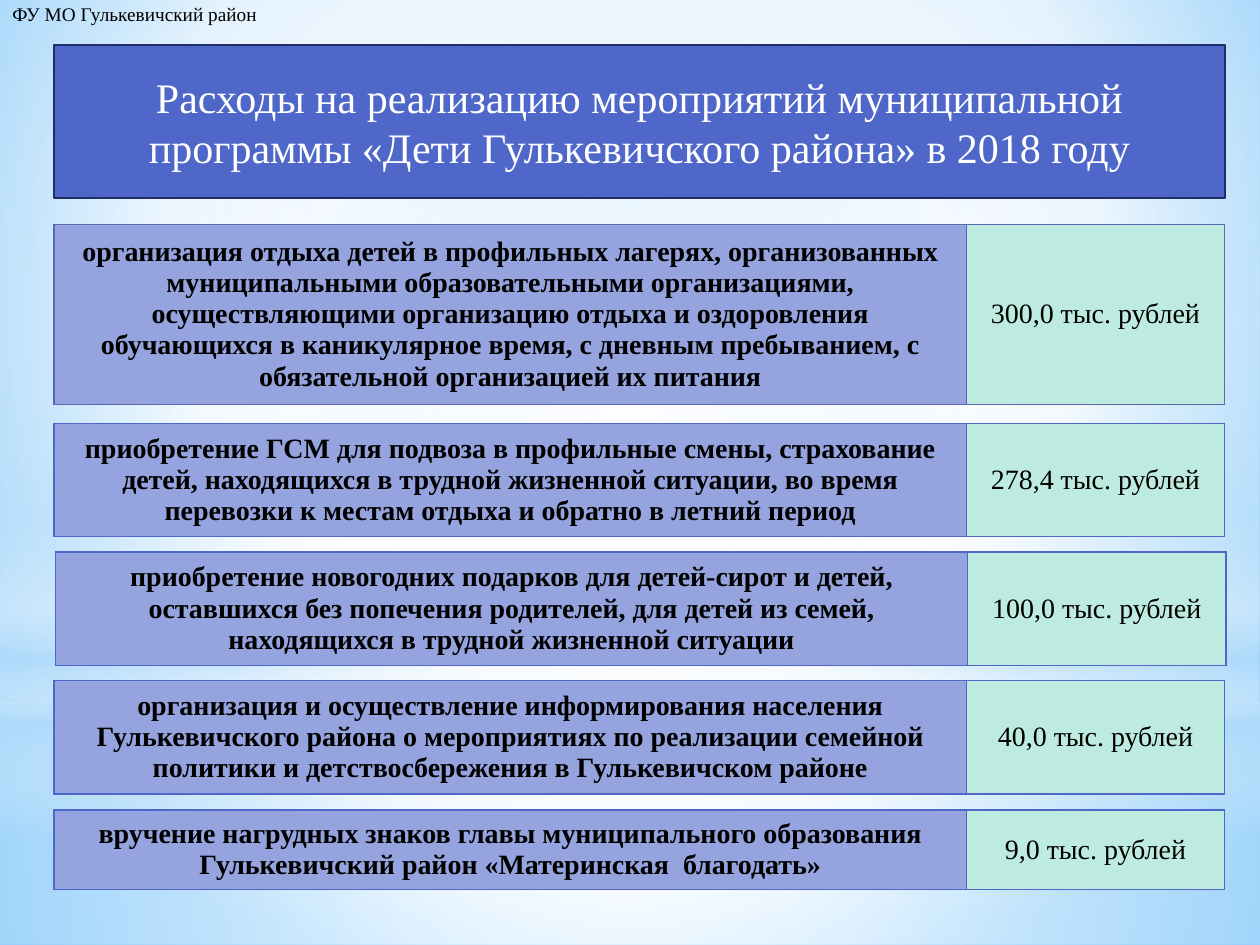
from dataclasses import dataclass

from pptx import Presentation
from pptx.dml.color import RGBColor as Rgb
from pptx.enum.shapes import MSO_SHAPE as Shape
from pptx.enum.text import MSO_ANCHOR as Anchor, MSO_AUTO_SIZE as AutoSize, PP_ALIGN as Align
from pptx.oxml import parse_xml
from pptx.oxml.ns import nsdecls
from pptx.util import Inches, Pt


@dataclass(frozen=True)
class Theme:
    font: str = "Times New Roman"
    text: str = "000000"
    light: str = "FFFFFF"
    accent: str = "4E67C8"
    accent_dark: str = "1F2E69"
    border_muted: str = "5968B0"
    activity: str = "95A4DE"
    amount: str = "BEEBDF"
    sky: str = "B4DCFA"
    sky_top: str = "9ED5FF"
    sky_edge: str = "5BB9FF"
    label_size: int = 11
    table_size: int = 16
    title_size: int = 24


def circle(left, top, right, bottom):
    return (f'<a:path path="circle"><a:fillToRect l="{left}000" t="{top}000" '
            f'r="{right}000" b="{bottom}000"/></a:path>')


CENTRED = circle(50, 50, 50, 50)
DOWNWARD = '<a:lin ang="5400000" scaled="0"/>'


class SlideBuilder:
    def __init__(self, slide, theme):
        self.slide = slide
        self.theme = theme

    def add_words(self, paragraph, words, size, color, bold=False):
        run = paragraph.add_run()
        run.text = words
        run.font.name = self.theme.font
        run.font.size = Pt(size)
        run.font.bold = bold
        run.font.color.rgb = Rgb.from_string(color)

    def gradient(self, properties, stops, shade):
        marks = "".join(
            f'<a:gs pos="{position}000"><a:srgbClr val="{color}">'
            f'<a:alpha val="{opacity}000"/></a:srgbClr></a:gs>'
            for position, color, opacity in stops)
        solid = properties.xpath("./a:solidFill")[0]
        properties.replace(solid, parse_xml(
            f'<a:gradFill {nsdecls("a")} rotWithShape="1">'
            f'<a:gsLst>{marks}</a:gsLst>{shade}</a:gradFill>'))

    def background(self, stops, shade):
        self.slide.background.fill.solid()
        properties = self.slide.element.xpath("./p:cSld/p:bg/p:bgPr")[0]
        self.gradient(properties, stops, shade)

    def glow(self, kind, top, height, stops, shade):
        glow = self.slide.shapes.add_shape(
            kind, 0, Inches(top), Inches(10), Inches(height))
        glow.shadow.inherit = False
        glow.line.fill.background()
        glow.fill.solid()
        self.gradient(glow.element.spPr, stops, shade)

    def label(self, words, left, top, width, height):
        label = self.slide.shapes.add_textbox(
            Inches(left), Inches(top), Inches(width), Inches(height))
        label.text_frame.word_wrap = False
        self.add_words(label.text_frame.paragraphs[0], words,
                       self.theme.label_size, self.theme.text)

    def title(self, words, left, top, width, height):
        title = self.slide.shapes.title
        title.left, title.top = Inches(left), Inches(top)
        title.width, title.height = Inches(width), Inches(height)
        title.element.spPr.append(parse_xml(
            f'<a:prstGeom {nsdecls("a")} prst="roundRect"><a:avLst/></a:prstGeom>'))
        title.fill.solid()
        title.fill.fore_color.rgb = Rgb.from_string(self.theme.accent)
        title.line.color.rgb = Rgb.from_string(self.theme.accent_dark)
        title.line.width = Pt(1.25)
        frame = title.text_frame
        frame.word_wrap = True
        frame.auto_size = AutoSize.NONE
        frame.vertical_anchor = Anchor.MIDDLE
        frame.paragraphs[0].alignment = Align.CENTER
        self.add_words(frame.paragraphs[0], words, self.theme.title_size, self.theme.light)
        self.slide.shapes.element.append(title.element)

    def cell(self, cell, words, fill, bold, borders):
        cell.fill.solid()
        cell.fill.fore_color.rgb = Rgb.from_string(fill)
        cell.vertical_anchor = Anchor.MIDDLE
        paragraph = cell.text_frame.paragraphs[0]
        paragraph.alignment = Align.CENTER
        self.add_words(paragraph, words, self.theme.table_size, self.theme.text, bold)
        properties = cell._tc.get_or_add_tcPr()
        for index, (side, color) in enumerate(zip("LRTB", borders)):
            properties.insert(index, parse_xml(
                f'<a:ln{side} {nsdecls("a")} w="12700"><a:solidFill>'
                f'<a:srgbClr val="{color}"/></a:solidFill></a:ln{side}>'))

    def expense(self, activity, amount, left, top, height, outer):
        widths = (7.24, 2.05)
        table = self.slide.shapes.add_table(
            1, 2, Inches(left), Inches(top), Inches(sum(widths)), Inches(height)).table
        for column, width in zip(table.columns, widths):
            column.width = Inches(width)
        inner = self.theme.accent
        self.cell(table.cell(0, 0), activity, self.theme.activity, True,
                  (outer, inner, outer, outer))
        self.cell(table.cell(0, 1), amount, self.theme.amount, False,
                  (inner, outer, outer, outer))


def main():
    theme = Theme()
    white, sky = theme.light, theme.sky
    deck = Presentation()
    deck.slide_width, deck.slide_height = Inches(10), Inches(7.5)
    page = SlideBuilder(deck.slides.add_slide(deck.slide_layouts[5]), theme)

    page.background([(0, theme.sky_top, 100), (60, white, 100), (100, theme.sky_edge, 100)],
                    circle(20, 10, 20, 60))
    page.glow(Shape.RECTANGLE, 5.58, 1.92,
              [(0, white, 91), (37, white, 76), (100, sky, 79)], CENTRED)
    page.glow(Shape.RECTANGLE, 0, 5.58,
              [(0, white, 89), (48, white, 62), (100, sky, 79)], CENTRED)
    page.glow(Shape.RECTANGLE, 4.12, 2.5,
              [(0, white, 0), (29, white, 30), (45, sky, 40),
               (55, white, 26), (65, sky, 60), (100, white, 0)], DOWNWARD)
    page.glow(Shape.OVAL, 1.75, 5.58, [(0, white, 100), (56, white, 0)], CENTRED)

    page.label("ФУ МО Гулькевичский район", 0, -0.03, 2.18, 0.29)
    page.title("Расходы на реализацию мероприятий муниципальной программы "
               "«Дети Гулькевичского района» в 2018 году", 0.43, 0.36, 9.29, 1.21)

    expenses = [
        ("организация отдыха детей в профильных лагерях, организованных муниципальными "
         "образовательными организациями, осуществляющими организацию отдыха и оздоровления "
         "обучающихся в каникулярное время, с дневным пребыванием, с обязательной "
         "организацией их питания",
         "300,0 тыс. рублей", 0.43, 1.78, 1.43, theme.border_muted),
        ("приобретение ГСМ для подвоза в профильные смены, страхование детей, находящихся "
         "в трудной жизненной ситуации, во время перевозки к местам отдыха и обратно "
         "в летний период",
         "278,4 тыс. рублей", 0.43, 3.36, 0.9, theme.accent),
        ("приобретение новогодних подарков для детей-сирот и детей, оставшихся без попечения "
         "родителей, для детей из семей, находящихся в трудной жизненной ситуации",
         "100,0 тыс. рублей", 0.44, 4.38, 0.9, theme.accent),
        ("организация и осуществление информирования населения Гулькевичского района "
         "о мероприятиях по реализации семейной политики и детствосбережения "
         "в Гулькевичском районе",
         "40,0 тыс. рублей", 0.43, 5.4, 0.9, theme.accent),
        ("вручение нагрудных знаков главы муниципального образования Гулькевичский район "
         "«Материнская  благодать»",
         "9,0 тыс. рублей", 0.43, 6.43, 0.63, theme.accent),
    ]
    for expense in expenses:
        page.expense(*expense)

    deck.save("out.pptx")


if __name__ == "__main__":
    main()
